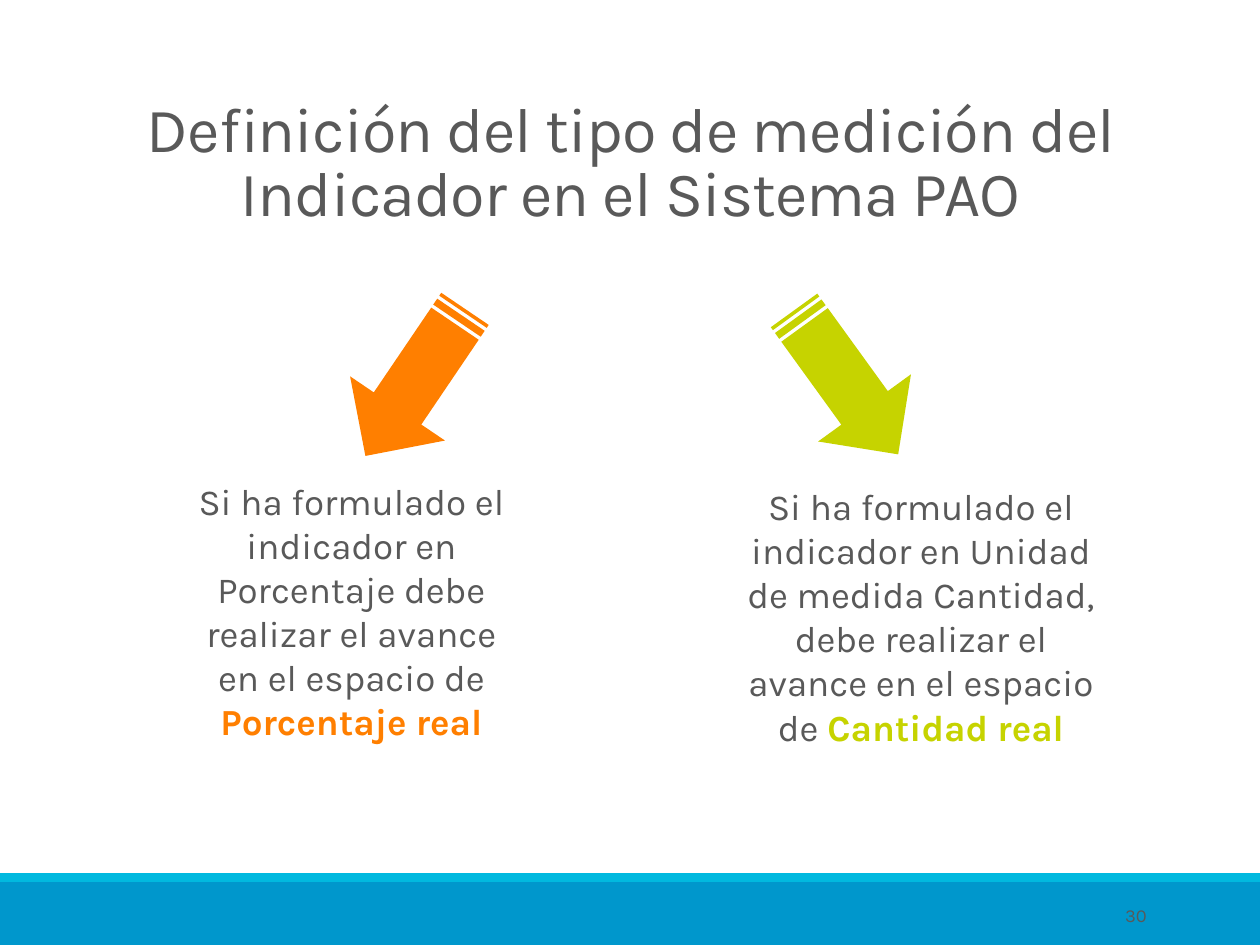
import pptx
import pptx.util
import pptx.dml.color
import pptx.enum.shapes
import pptx.enum.text

Inches = pptx.util.Inches
ALIGN = pptx.enum.text.PP_ALIGN
ANCHOR = pptx.enum.text.MSO_ANCHOR
SHAPE = pptx.enum.shapes.MSO_SHAPE
FONT = "Karla"
COLORS = {"text": "595959", "band": "0097CC", "stripe": "01B9DF",
          "percent": "FF7F00", "quantity": "C6D300"}


def rgb(name):
    """Return the named colour."""
    return pptx.dml.color.RGBColor.from_string(COLORS[name])


def add_filled(s, kind, x, y, w, h, color, rotation=0):
    """Add a flat preset shape without outline."""
    sp = s.shapes.add_shape(kind, Inches(x), Inches(y), Inches(w), Inches(h))
    sp.shadow.inherit = False
    sp.fill.solid()
    sp.fill.fore_color.rgb = rgb(color)
    sp.line.fill.background()
    sp.rotation = rotation


def add_text(s, x, y, w, h, runs, size, align=ALIGN.CENTER, anchor=ANCHOR.TOP):
    """Add a wrapped paragraph of (text, colour, bold) runs and return it."""
    sp = s.shapes.add_textbox(Inches(x), Inches(y), Inches(w), Inches(h))
    tf = sp.text_frame
    tf.word_wrap = True
    tf.vertical_anchor = anchor
    p = tf.paragraphs[0]
    p.alignment = align
    for text, color, bold in runs:
        r = p.add_run()
        r.text = text
        r.font.name = FONT
        r.font.size = pptx.util.Pt(size)
        r.font.bold = bold
        r.font.color.rgb = rgb(color)
    return p


def add_footer(s, x, y, w, h, number):
    """Add the two-tone band with the slide number."""
    stripe = 0.07
    add_filled(s, SHAPE.RECTANGLE, x, y + stripe, w, h - stripe, "band")
    add_filled(s, SHAPE.RECTANGLE, x, y, w, stripe, "stripe")
    add_text(s, x + 8.12, y + 0.13, 1.08, 0.4, [(number, "text", False)], 10.5,
             ALIGN.RIGHT, ANCHOR.MIDDLE)


def add_title(s, x, y, w, h, text):
    """Add the tightly set heading."""
    p = add_text(s, x, y, w, h, [(text, "text", False)], 36, anchor=ANCHOR.BOTTOM)
    p.line_spacing = 0.85
    for r in p.runs:
        r.font._element.set("spc", "-50")


def add_option(s, x, y, w, h, text, field, color, arrow_x, rotation):
    """Add a measurement option with the arrow leading to it."""
    add_text(s, x, y, w, h, [(text, "text", False), (field, color, True)], 21)
    add_filled(s, SHAPE.STRIPED_RIGHT_ARROW, x + arrow_x, 2.58, 1.41, 0.91, color, rotation)


def main():
    """Build and save the slide."""
    prs = pptx.Presentation()
    prs.slide_width, prs.slide_height = Inches(10), Inches(7.5)
    s = prs.slides.add_slide(prs.slide_layouts[6])
    add_footer(s, 0, 6.93, 10, 0.57, "30")
    add_title(s, 0.88, 0.28, 8.25, 1.59,
              "Definición del tipo de medición del Indicador en el Sistema PAO")
    add_option(s, 1.36, 3.75, 2.86, 2.22,
               "Si ha formulado el indicador en Porcentaje debe realizar "
               "el avance en el espacio de ",
               "Porcentaje real", "percent", 1.23, 124.1)
    add_option(s, 5.78, 3.79, 3.06, 2.22,
               "Si ha formulado el indicador en Unidad de medida Cantidad, debe "
               "realizar el avance en el espacio de ",
               "Cantidad real", "quantity", 0.23, 54.1)
    prs.save("out.pptx")


if __name__ == "__main__":
    main()
